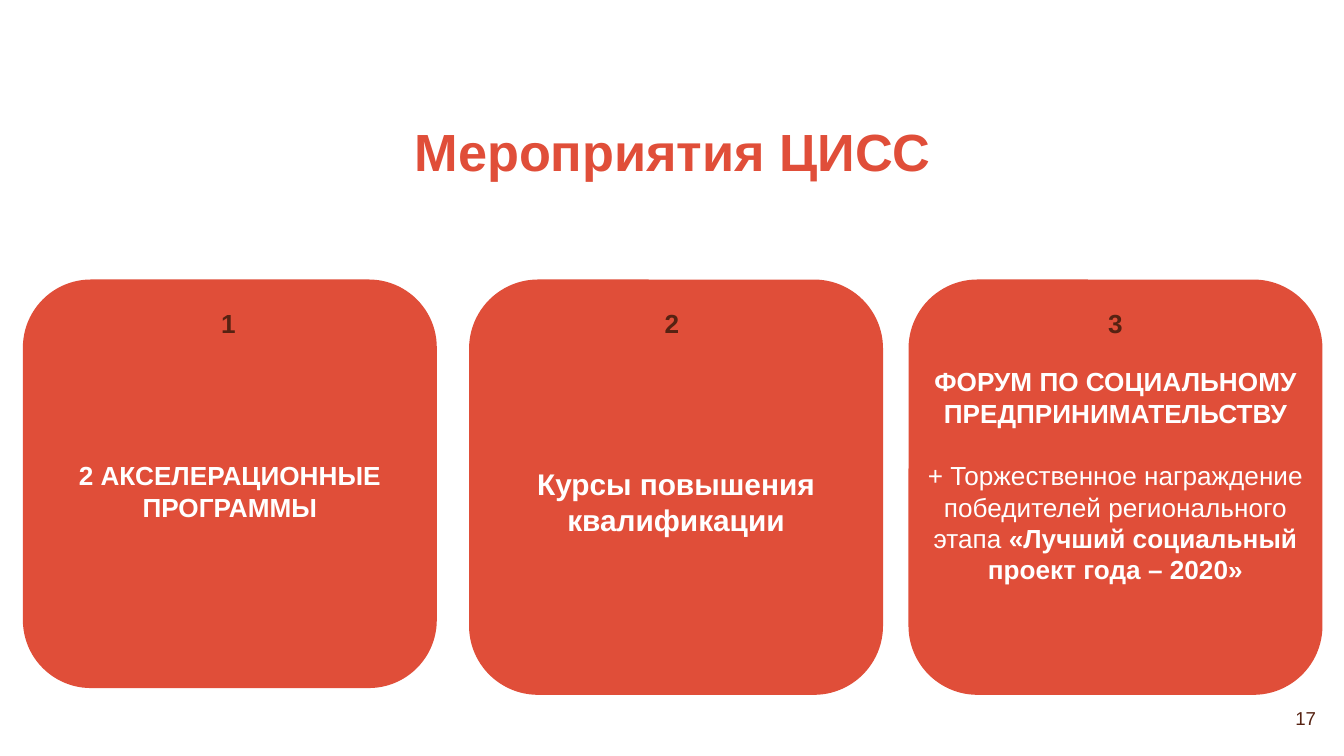
from dataclasses import dataclass

from pptx import Presentation
from pptx.dml.color import RGBColor
from pptx.enum.shapes import MSO_SHAPE
from pptx.enum.text import MSO_ANCHOR, MSO_AUTO_SIZE, PP_ALIGN
from pptx.slide import Slide
from pptx.util import Inches, Pt


def color(hex_string):
    return RGBColor.from_string(hex_string)


def write(frame, paragraphs, size, font, fill, bold=True, align=PP_ALIGN.CENTER,
          anchor=MSO_ANCHOR.TOP, inset_top=0.1, gap=0):
    """Fill a frame; each paragraph is a list of (text, bold) runs or a string."""
    frame.word_wrap = True
    frame.auto_size = MSO_AUTO_SIZE.NONE
    frame.vertical_anchor = anchor
    frame.margin_left = frame.margin_right = frame.margin_bottom = Inches(0.1)
    frame.margin_top = Inches(inset_top)
    for index, runs in enumerate(paragraphs):
        paragraph = frame.add_paragraph() if index else frame.paragraphs[0]
        paragraph.alignment = align
        paragraph.line_spacing = Pt(size * 1.2)
        paragraph.space_before = Pt(gap if index else 0)
        if isinstance(runs, str):
            runs = [(runs, bold)]
        for text, run_bold in runs:
            run = paragraph.add_run()
            run.text = text
            run.font.name = font
            run.font.size = Pt(size)
            run.font.bold = run_bold
            run.font.color.rgb = color(fill)


@dataclass
class EventSlide:
    slide: Slide
    font: str = "Arial"
    accent: str = "E04E39"
    dark: str = "562212"
    light: str = "FFFFFF"

    def title(self, text, left, top, width, height):
        shape = self.slide.shapes.title
        shape.left, shape.top = Inches(left), Inches(top)
        shape.width, shape.height = Inches(width), Inches(height)
        write(shape.text_frame, [text], 28, self.font, self.accent)

    def text(self, paragraphs, left, top, width, height, size, fill, **style):
        shape = self.slide.shapes.add_textbox(
            Inches(left), Inches(top), Inches(width), Inches(height))
        write(shape.text_frame, paragraphs, size, self.font, fill, **style)

    def card(self, left, top, width, height):
        shape = self.slide.shapes.add_shape(
            MSO_SHAPE.FLOWCHART_ALTERNATE_PROCESS,
            Inches(left), Inches(top), Inches(width), Inches(height))
        shape.shadow.inherit = False
        shape.fill.solid()
        shape.fill.fore_color.rgb = color(self.accent)
        shape.line.fill.background()

    def number(self, text, left, top, width=0.9, **style):
        self.text([text], left, top, width, 0.43, fill=self.dark,
                  anchor=MSO_ANCHOR.MIDDLE, **style)


def main():
    presentation = Presentation()
    presentation.slide_width = Inches(10)
    presentation.slide_height = Inches(10 * 9 / 16)
    layout = presentation.slide_layouts.get_by_name("Title Only")
    page = EventSlide(presentation.slides.add_slide(layout))

    page.number("17", 9.29, 5.13, width=0.6, size=10, bold=False,
                align=PP_ALIGN.RIGHT)
    page.title("Мероприятия ЦИСС", 0.17, 0.79, 9.67, 0.93)

    # Card left, card height, text height, paragraphs, text style
    cards = [
        (0.17, 3.04, 2.45, ["2 АКСЕЛЕРАЦИОННЫЕ ПРОГРАММЫ"],
         {"size": 14, "inset_top": 0.8}),
        (3.49, 3.09, 2.22, ["Курсы повышения квалификации"],
         {"size": 16, "anchor": MSO_ANCHOR.MIDDLE}),
        (6.76, 3.09, 2.45,
         ["ФОРУМ ПО СОЦИАЛЬНОМУ ПРЕДПРИНИМАТЕЛЬСТВУ",
          [("+ Торжественное награждение победителей регионального этапа ", False),
           ("«Лучший социальный проект года – 2020»", True)]],
         {"size": 14, "gap": 16.8}),
    ]
    for index, (left, height, text_height, paragraphs, style) in enumerate(cards):
        page.card(left, 2.08, 3.08, height)
        page.text(paragraphs, left, 2.62, 3.08, text_height, fill=page.light, **style)
        page.number(str(index + 1), 1.25 + 3.3 * index, 2.19, size=14)

    presentation.save("out.pptx")


if __name__ == "__main__":
    main()
